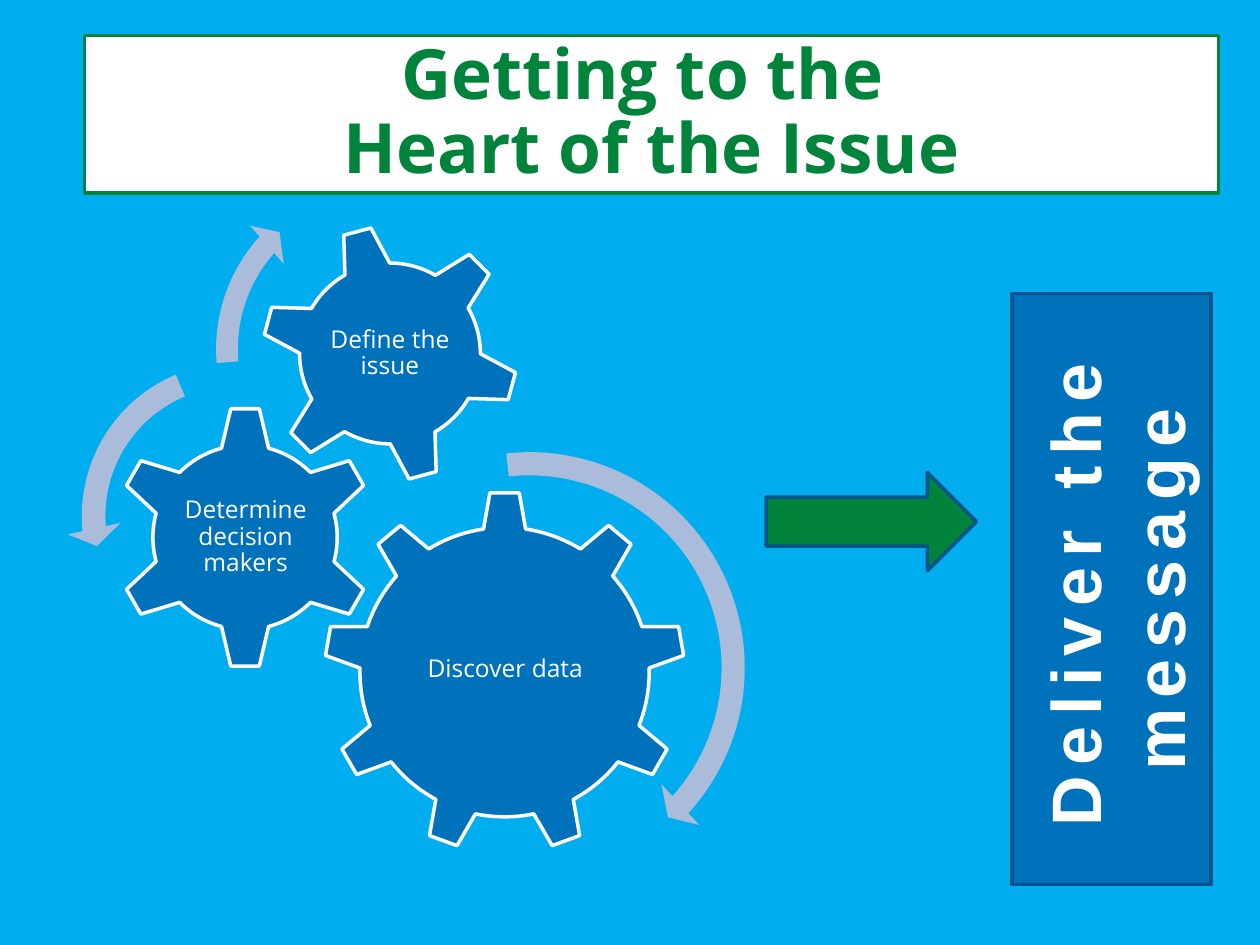
from pptx import Presentation, util as u
from pptx.dml.color import RGBColor
from pptx.enum import shapes, text

SKY = RGBColor(0x00, 0xAE, 0xEF)
BLUE = RGBColor(0x00, 0x72, 0xBC)
NAVY = RGBColor(0x00, 0x54, 0x8B)
GREEN = RGBColor(0x00, 0x83, 0x3B)
LILAC = RGBColor(0xAB, 0xBC, 0xDA)
WHITE = RGBColor(0xFF, 0xFF, 0xFF)
KIND = shapes.MSO_SHAPE

deck = Presentation()
deck.slide_width, deck.slide_height = u.Inches(10), u.Inches(7.5)
col, row = deck.slide_width / 100, deck.slide_height / 75
slide = deck.slides.add_slide(deck.slide_layouts[6])
slide.background.fill.solid()
slide.background.fill.fore_color.rgb = SKY


def draw(kind, x, y, w, h, fill, line=None, adjs=()):
    shape = slide.shapes.add_shape(kind, int(x * col), int(y * row), int(w * col), int(h * row))
    shape.shadow.inherit = False
    shape.fill.solid()
    shape.fill.fore_color.rgb = fill
    if line is None:
        shape.line.fill.background()
    else:
        shape.line.color.rgb = line
        shape.line.width = u.Pt(2)
    for i, adj in enumerate(adjs):
        shape.adjustments[i] = adj
    return shape


def write(shape, words, size, face, color, bold=False, space=None):
    frame = shape.text_frame
    frame.word_wrap = True
    frame.text = words
    para = frame.paragraphs[0]
    para.alignment = text.PP_ALIGN.CENTER
    para.line_spacing = space
    para.font.size, para.font.name = u.Pt(size), face
    para.font.bold, para.font.color.rgb = bold, color
    return frame


title = draw(KIND.ROUNDED_RECTANGLE, 6.7, 2.8, 90, 12.5, WHITE, GREEN, [0])
frame = write(title, "Getting to the \vHeart of the Issue", 39.6, "Open Sans", GREEN, True, 0.9)
frame.vertical_anchor = text.MSO_ANCHOR.MIDDLE

gears = [
    (KIND.GEAR_9, 25.7, 39, 28.7, 0, "Discover data", (31.5, 45.7, 17.2, 14.8)),
    (KIND.GEAR_6, 9, 32.2, 20.9, 0, "Determine decision makers", (14.3, 37.5, 10.4, 10.3)),
    (KIND.GEAR_6, 20.7, 17.8, 20.5, 345, "Define the issue", (25.2, 22.3, 11.5, 11.5)),
]
for kind, x, y, size, turn, words, (left, top, wide, high) in gears:
    draw(kind, x, y, size, size, BLUE, WHITE).rotation = turn
    label = slide.shapes.add_textbox(int(left * col), int(top * row), int(wide * col), int(high * row))
    frame = write(label, words, 14, "Open Sans", WHITE, space=0.9)
    frame.vertical_anchor = text.MSO_ANCHOR.MIDDLE
    frame.margin_left = frame.margin_right = u.Inches(0.02)
    frame.margin_top = frame.margin_bottom = u.Inches(0.02)

arcs = [
    (KIND.CIRCULAR_ARROW, 23.6, 34.6, 36.8, (0.05, 2.99, 25.29, 158.35, 0.06)),
    (KIND.LEFT_CIRCULAR_ARROW, 5.3, 27.6, 26.7, (0.07, 4.3, 104.89, 148.38, 0.08)),
    (KIND.CIRCULAR_ARROW, 16, 13.3, 28.8, (0.06, 3.94, 133.14, 105.08, 0.07)),
]
for kind, x, y, size, adjs in arcs:
    draw(kind, x, y, size, size, LILAC, adjs=adjs)

draw(KIND.RECTANGLE, 80.3, 23.3, 15.8, 46.9, BLUE, NAVY)
draw(KIND.RIGHT_ARROW, 60.8, 37.5, 16.7, 7.8, GREEN, NAVY)

goal = slide.shapes.add_textbox(int(81.4 * col), int(25.9 * row), int(18.5 * col), int(41.8 * row))
frame = write(goal, "Deliver the message", 40, "Arial", WHITE, True)
frame._txBody.bodyPr.set("vert", "vert270")
frame.paragraphs[0].runs[0]._r.get_or_add_rPr().set("spc", "600")

deck.save("out.pptx")
